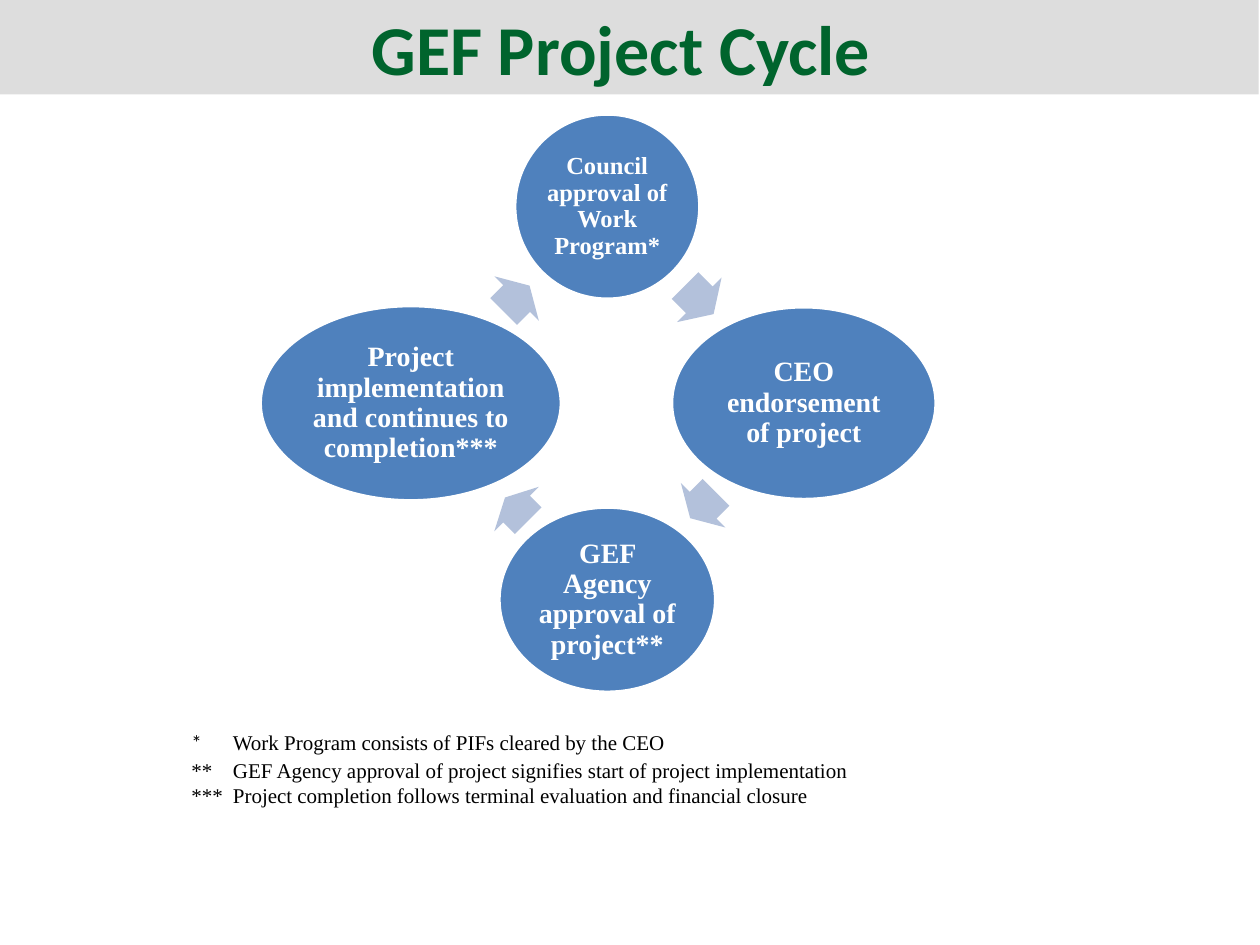
from math import cos, radians, sin

from lxml.etree import SubElement
from pptx import Presentation
from pptx.dml.color import RGBColor
from pptx.enum.shapes import MSO_SHAPE as Shape
from pptx.enum.text import MSO_ANCHOR as Anchor, PP_ALIGN as Align
from pptx.oxml.ns import qn
from pptx.util import Inches, Pt

BLUE = RGBColor(0x4F, 0x81, 0xBD)
PALE_BLUE = RGBColor(0xB3, 0xC1, 0xDB)
GREY = RGBColor(0xDD, 0xDD, 0xDD)
GREEN = RGBColor(0x00, 0x64, 0x2D)
WHITE = RGBColor(0xFF, 0xFF, 0xFF)
BLACK = RGBColor(0x00, 0x00, 0x00)
SERIF, SANS = "Times New Roman", "Calibri"

WIDTH, HEIGHT = Inches(10), Inches(7.5)

# Cycle geometry, in inches
CENTER_X, CENTER_Y, RADIUS = 4.82, 3.2, 1.56
ARROW_HEIGHT = 0.5

# Clockwise from the top: text, width, height, font size
STAGES = [
    ("Council approval of Work Program*", 1.47, 1.47, 14),
    ("CEO endorsement of project", 2.1, 1.53, 16),
    ("GEF Agency approval of project**", 1.72, 1.47, 16),
    ("Project implementation and continues to completion***", 2.39, 1.55, 16),
]
# Arrow after each stage: centre x, centre y, length
ARROWS = [(5.55, 2.38, 0.32), (5.58, 4.01, 0.29),
          (4.1, 4.04, 0.26), (4.1, 2.37, 0.29)]
FOOTNOTES = [
    ("*", "Work Program consists of PIFs cleared by the CEO"),
    ("**", "GEF Agency approval of project signifies start of project implementation"),
    ("***", "Project completion follows terminal evaluation and financial closure"),
]


def style_font(font, name, size, color, bold=False):
    font.name, font.size, font.bold = name, Pt(size), bold
    font.color.rgb = color


def add_filled(slide, kind, x, y, width, height, color):
    """Add a flat shape centred on x, y (inches)."""
    shape = slide.shapes.add_shape(
        kind, Inches(x - width / 2), Inches(y - height / 2),
        Inches(width), Inches(height))
    shape.shadow.inherit = False
    shape.fill.solid()
    shape.fill.fore_color.rgb = color
    shape.line.fill.background()
    return shape


def set_centered_text(shape, text, name, size, color):
    frame = shape.text_frame
    frame.word_wrap = True
    frame.vertical_anchor = Anchor.MIDDLE
    paragraph = frame.paragraphs[0]
    paragraph.text = text
    paragraph.alignment = Align.CENTER
    style_font(paragraph.runs[0].font, name, size, color, bold=True)
    return frame


def add_stage(slide, x, y, text, width, height, size):
    ellipse = add_filled(slide, Shape.OVAL, x, y, width, height, BLUE)
    ellipse.line.color.rgb = WHITE
    ellipse.line.width = Pt(2)
    frame = set_centered_text(ellipse, text, SERIF, size, WHITE)
    frame.margin_left = frame.margin_right = Inches(0.02)
    frame.margin_top = frame.margin_bottom = Inches(0.02)
    frame.paragraphs[0].line_spacing = 0.9


def add_arrow(slide, x, y, length, rotation):
    arrow = add_filled(slide, Shape.RIGHT_ARROW, x, y, length, ARROW_HEIGHT, PALE_BLUE)
    arrow.adjustments[0], arrow.adjustments[1] = 0.6, 0.5
    arrow.rotation = rotation


def add_footnotes(slide):
    box = slide.shapes.add_textbox(Inches(1.42), Inches(5.66), Inches(7.58), Inches(0.81))
    frame = box.text_frame
    frame.word_wrap = True
    for index, (mark, note) in enumerate(FOOTNOTES):
        paragraph = frame.paragraphs[0] if index == 0 else frame.add_paragraph()
        tabs = SubElement(paragraph._p.get_or_add_pPr(), qn("a:tabLst"))
        SubElement(tabs, qn("a:tab"), pos=str(Inches(0.33)), algn="l")
        # The first mark is sans, followed by a larger gap
        mark_font, gap_size = (SANS, 18) if index == 0 else (SERIF, 12)
        for text, name, size in [(mark, mark_font, 12), ("\t", mark_font, gap_size),
                                 (note, SERIF, 12)]:
            run = paragraph.add_run()
            run.text = text
            style_font(run.font, name, size, BLACK)


def main():
    presentation = Presentation()
    presentation.slide_width, presentation.slide_height = WIDTH, HEIGHT
    slide = presentation.slides.add_slide(presentation.slide_layouts[6])

    # Cycle: stages on a circle, each followed by an arrow
    for index, (stage, arrow) in enumerate(zip(STAGES, ARROWS)):
        angle = radians(90 * index - 90)
        add_stage(slide, CENTER_X + RADIUS * cos(angle),
                  CENTER_Y + RADIUS * sin(angle), *stage)
        add_arrow(slide, *arrow, rotation=45 + 90 * index)

    add_footnotes(slide)

    # Title band
    band = add_filled(slide, Shape.RECTANGLE, 4.99, 0.375, 10, 0.75, GREY)
    set_centered_text(band, "GEF Project Cycle ", SANS, 40, GREEN)

    presentation.save("out.pptx")


if __name__ == "__main__":
    main()
